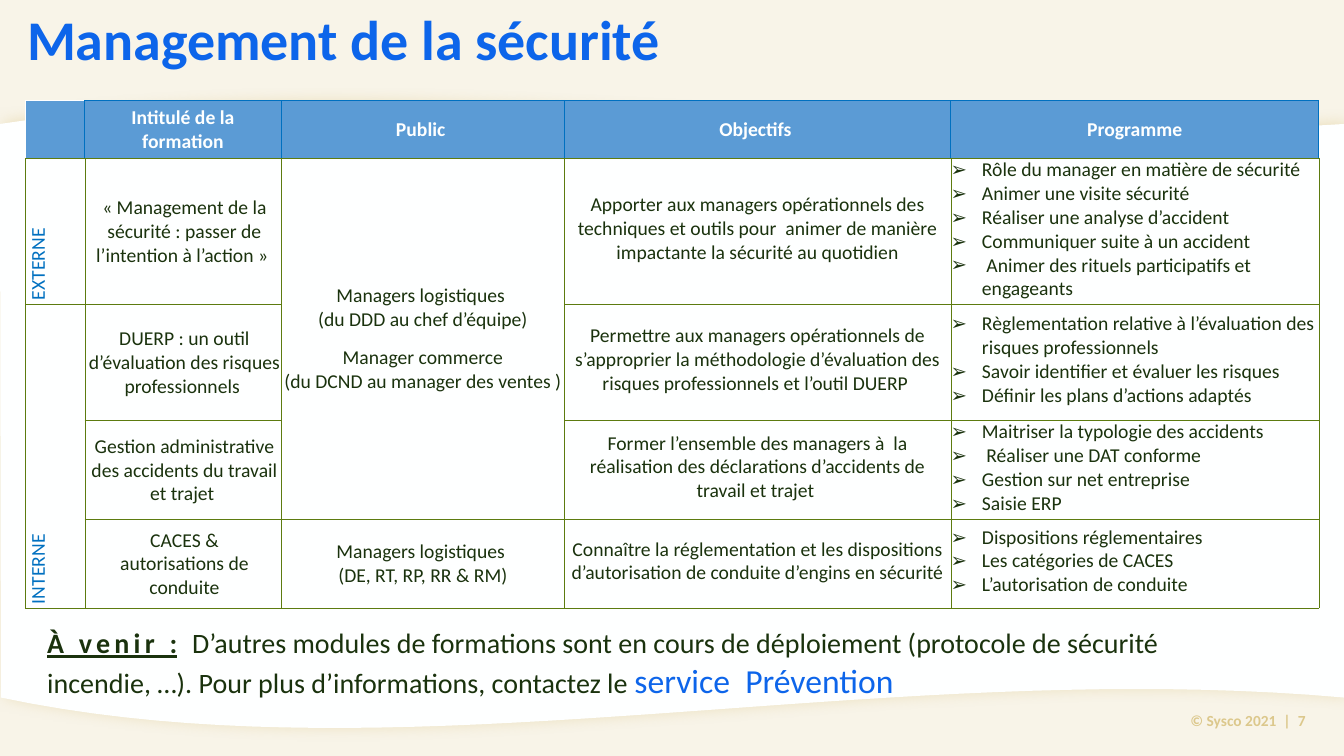
"""Build the slide listing the safety management training courses."""
from lxml.etree import SubElement
from pptx import Presentation
from pptx.dml.color import RGBColor
from pptx.enum.text import MSO_ANCHOR, PP_ALIGN
from pptx.oxml.ns import qn
from pptx.util import Inches, Pt

FONT = "Calibri"
CREAM = RGBColor(0xF8, 0xF4, 0xE8)
WHITE = RGBColor(0xFE, 0xFF, 0xFF)
SAND = RGBColor(0xDC, 0xC8, 0x8C)
BRIGHT_BLUE = RGBColor(0x0D, 0x65, 0xEA)
HEADER_BLUE = RGBColor(0x5B, 0x9B, 0xD5)
LINE_BLUE = RGBColor(0x00, 0x70, 0xC0)
OLIVE = RGBColor(0x5D, 0x7B, 0x0F)
DARK_GREEN = RGBColor(0x1A, 0x32, 0x0D)

TITLE = "Management de la sécurité"
FOOTER = "© Sysco 2021  |  7"
UPCOMING = [
    ("À venir :", 20, DARK_GREEN, True, True, 3),
    (" ", 20, DARK_GREEN, True, False, 3),
    ("D’autres modules de formations sont en cours de déploiement (protocole de sécurité\t incendie, …). "
     "Pour plus d’informations, contactez le ", 20, DARK_GREEN, False, False, 0),
    ("service  Prévention", 24, BRIGHT_BLUE, False, False, 0),
]

HEADERS = ["", "Intitulé de la formation", "Public ", "Objectifs ", "Programme"]
ROWS = [
    [["EXTERNE"],
     ["« Management de la sécurité : passer de l’intention à l’action » "],
     ["Managers logistiques ", "(du DDD au chef d’équipe)",
      "Manager commerce", "(du DCND au manager des ventes )"],
     ["Apporter aux managers opérationnels des techniques et outils pour  animer de manière "
      "impactante la sécurité au quotidien"],
     ["Rôle du manager en matière de sécurité", "Animer une visite sécurité",
      "Réaliser une analyse d’accident", "Communiquer suite à un accident",
      " Animer des rituels participatifs et engageants"]],
    [["INTERNE"],
     ["DUERP : un outil d’évaluation des risques professionnels "],
     [],
     ["Permettre aux managers opérationnels de s’approprier la méthodologie d’évaluation des "
      "risques professionnels et l’outil DUERP "],
     ["Règlementation relative à l’évaluation des risques professionnels",
      "Savoir identifier et évaluer les risques", "Définir les plans d’actions adaptés"]],
    [[],
     ["Gestion administrative des accidents du travail et trajet "],
     [],
     ["Former l’ensemble des managers à  la réalisation des déclarations d’accidents de travail et trajet "],
     ["Maitriser la typologie des accidents", " Réaliser une DAT conforme",
      "Gestion sur net entreprise", "Saisie ERP"]],
    [[],
     ["CACES &", "autorisations de conduite"],
     ["Managers logistiques ", "(DE, RT, RP, RR & RM)"],
     ["Connaître la réglementation et les dispositions d’autorisation de conduite d’engins en sécurité"],
     ["Dispositions réglementaires", "Les catégories de CACES", "L’autorisation de conduite"]],
]
COLUMN_WIDTHS = [0.59, 1.95, 2.81, 3.83, 3.65]
ROW_HEIGHTS = [0.52, 1.31, 1.15, 0.95, 0.88]
MERGES = [((1, 2), (3, 2)), ((2, 0), (4, 0))]
HEADER_INSETS = (0.1, 0.05, 0.1, 0.05)
LABEL_INSETS = (0.04, 0.01, 0.01, 0)
COLUMN_INSETS = [LABEL_INSETS, LABEL_INSETS, (0, 0, 0, 0), (0, 0, 0, 0.05), (0, 0, 0, 0.05)]
LABEL_COLUMN, PROGRAMME_COLUMN = 0, 4
GROUP_START = "Manager commerce"

WAVE_TOP = [(0, 1.23), (1, 1.08), (2.04, 1.03), (3.12, 1.02)], [(3.12, 1.02), (6.35, 1.01), (9.86, 1.45), (13.33, 1.23)]
WAVE_BOTTOM = [(13.33, 6.92), (8.71, 6.51), (4.02, 7.77), (0.01, 6.92)]
WAVE_STEPS = 40


def curve_points(controls):
    """Sample a cubic curve."""
    points = []
    for step in range(WAVE_STEPS + 1):
        t = step / WAVE_STEPS
        weights = ((1 - t) ** 3, 3 * t * (1 - t) ** 2, 3 * t * t * (1 - t), t ** 3)
        points.append(tuple(Inches(sum(w * c[axis] for w, c in zip(weights, controls))) for axis in (0, 1)))
    return points


def add_color(parent, color):
    """Add a solid colour element."""
    return SubElement(parent, qn("a:srgbClr"), val=str(color))


def style_font(font, size, color, bold=False):
    """Set the typeface, size, colour and weight."""
    font.name, font.size, font.bold = FONT, Pt(size), bold
    font.color.rgb = color


def add_wave(slide):
    """Draw the white wave with its soft shadow."""
    points = [point for curve in (*WAVE_TOP, WAVE_BOTTOM) for point in curve_points(curve)]
    builder = slide.shapes.build_freeform(*points[0])
    builder.add_line_segments(points[1:], close=True)
    wave = builder.convert_to_shape()
    wave.fill.solid()
    wave.fill.fore_color.rgb = WHITE
    wave.line.fill.background()
    wave.shadow.inherit = False
    effects = wave._element.spPr.find(qn("a:effectLst"))
    shadow = SubElement(effects, qn("a:outerShdw"), blurRad=str(Pt(10)), dist=str(Pt(3)), dir="0")
    SubElement(add_color(shadow, SAND), qn("a:alpha"), val="50000")


def add_text_box(slide, left, top, width, height, anchor):
    """Add a wrapping text box and return its first paragraph."""
    box = slide.shapes.add_textbox(*map(Inches, (left, top, width, height)))
    box.text_frame.word_wrap = True
    box.text_frame.vertical_anchor = anchor
    return box.text_frame.paragraphs[0]


def set_borders(cell, row, column):
    """Draw the cell borders: blue around header titles, olive elsewhere."""
    properties = cell._tc.get_or_add_tcPr()
    for side in "LRTB":
        if (row, column) == (0, 0) and side in "LT":
            continue
        blue = row == 0 and side != "B"
        line = SubElement(properties, qn(f"a:ln{side}"), w=str(Pt(0.75 if blue else 0.25)))
        add_color(SubElement(line, qn("a:solidFill")), LINE_BLUE if blue else OLIVE)


def fill_cell(cell, row, column, lines):
    """Write the lines of one cell and style it."""
    header = row == 0
    set_borders(cell, row, column)
    if header:
        cell.fill.solid()
        cell.fill.fore_color.rgb = HEADER_BLUE
    else:
        cell.fill.background()
    insets = HEADER_INSETS if header else COLUMN_INSETS[column]
    cell.margin_left, cell.margin_top, cell.margin_right, cell.margin_bottom = map(Inches, insets)
    cell.vertical_anchor = MSO_ANCHOR.MIDDLE
    label = column == LABEL_COLUMN and not header
    if label:
        cell._tc.get_or_add_tcPr().set("vert", "vert270")
    color = WHITE if header else LINE_BLUE if label else DARK_GREEN
    for index, text in enumerate(lines):
        frame = cell.text_frame
        paragraph = frame.add_paragraph() if index else frame.paragraphs[0]
        paragraph.text = text
        if column == PROGRAMME_COLUMN and not header:
            properties = paragraph._p.get_or_add_pPr()
            properties.set("marL", str(Inches(0.31)))
            properties.set("indent", str(Inches(-0.31)))
            SubElement(properties, qn("a:buFont"), typeface=FONT)
            SubElement(properties, qn("a:buChar"), char="➢")
        elif not label:
            paragraph.alignment = PP_ALIGN.CENTER
        if text == GROUP_START:
            paragraph.space_before = Pt(10)
        style_font(paragraph.font, 14, color, header)


def add_training_table(slide):
    """Add the table of training courses."""
    frame = slide.shapes.add_table(len(ROW_HEIGHTS), len(COLUMN_WIDTHS), Inches(0.25), Inches(1),
                                   Inches(sum(COLUMN_WIDTHS)), Inches(sum(ROW_HEIGHTS)))
    table = frame.table
    table.first_row = table.horz_banding = False
    for column, width in zip(table.columns, COLUMN_WIDTHS):
        column.width = Inches(width)
    for row, height in zip(table.rows, ROW_HEIGHTS):
        row.height = Inches(height)
    for start, end in MERGES:
        table.cell(*start).merge(table.cell(*end))
    contents = [[[header] for header in HEADERS], *ROWS]
    for row, cells in enumerate(contents):
        for column, lines in enumerate(cells):
            fill_cell(table.cell(row, column), row, column, lines)


def main():
    """Compose and save the slide."""
    presentation = Presentation()
    presentation.slide_width, presentation.slide_height = Inches(13.33), Inches(7.5)
    slide = presentation.slides.add_slide(presentation.slide_layouts[6])
    slide.background.fill.solid()
    slide.background.fill.fore_color.rgb = CREAM
    add_wave(slide)

    footer = add_text_box(slide, 11.21, 6.95, 1.84, 0.4, MSO_ANCHOR.MIDDLE)
    footer.text, footer.alignment = FOOTER, PP_ALIGN.RIGHT
    style_font(footer.font, 11, SAND, True)
    title = add_text_box(slide, 0.17, 0, 10.84, 0.88, MSO_ANCHOR.TOP)
    title.text = TITLE
    style_font(title.font, 40, BRIGHT_BLUE, True)

    add_training_table(slide)

    upcoming = add_text_box(slide, 0.37, 6.16, 12.55, 0.59, MSO_ANCHOR.TOP)
    for text, size, color, bold, underline, spacing in UPCOMING:
        run = upcoming.add_run()
        run.text = text
        style_font(run.font, size, color, bold)
        run.font.underline = underline
        run._r.get_or_add_rPr().set("spc", str(spacing * 100))
    presentation.save("out.pptx")


if __name__ == "__main__":
    main()
